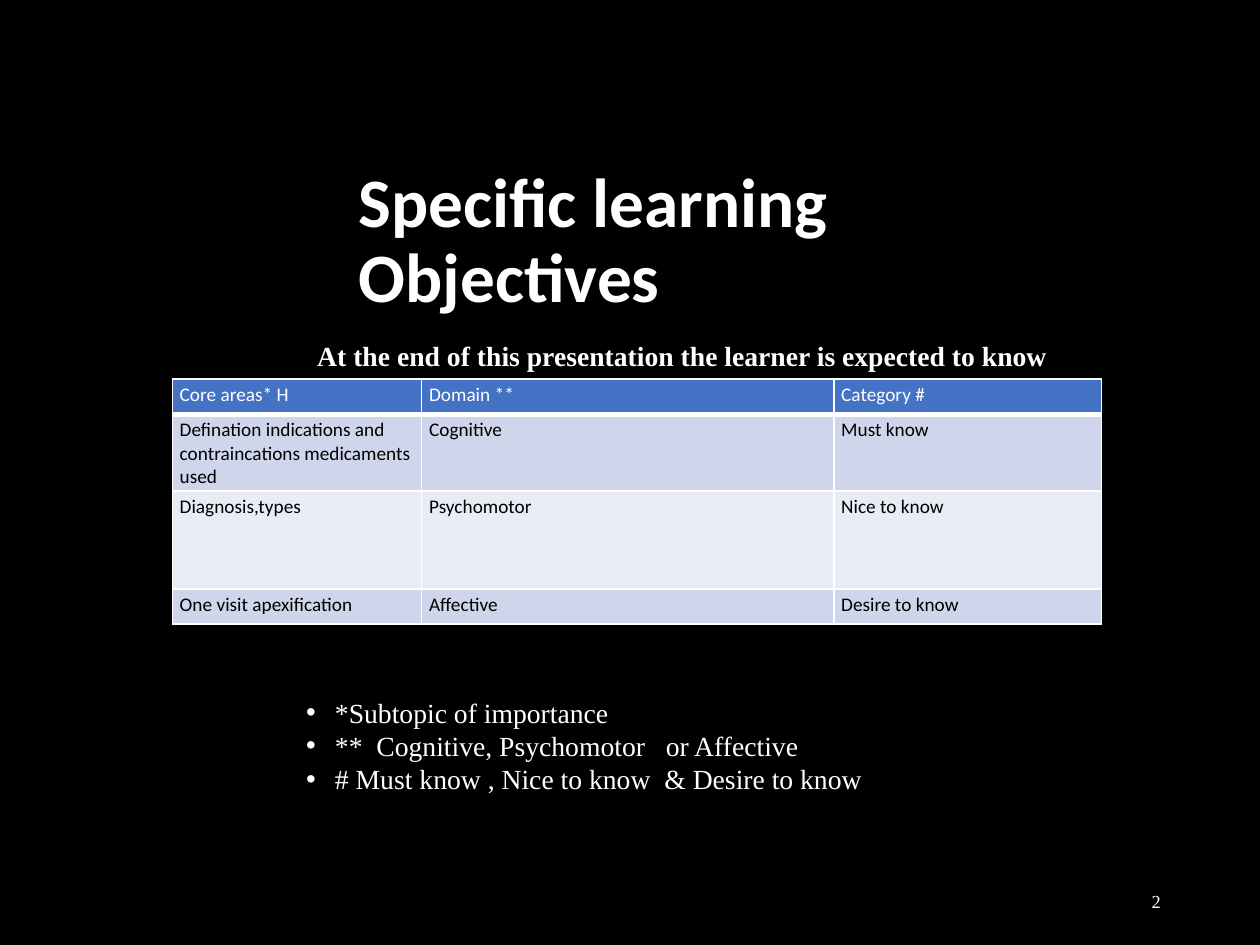
from lxml.etree import SubElement
from pptx import Presentation
from pptx.dml.color import RGBColor
from pptx.enum.text import MSO_ANCHOR as Anchor, PP_ALIGN as Align
from pptx.oxml.ns import qn
from pptx.util import Pt

BLACK = RGBColor(0x00, 0x00, 0x00)
WHITE = RGBColor(0xFF, 0xFF, 0xFF)
HEADER_BLUE = RGBColor(0x44, 0x72, 0xC4)
BAND_DARK = RGBColor(0xCF, 0xD5, 0xEA)
BAND_LIGHT = RGBColor(0xE9, 0xEB, 0xF5)
SANS, SERIF = "Calibri", "Times New Roman"

COLUMN_WIDTHS = [142.5, 235.5, 153]
ROW_HEIGHTS = [20, 43.5, 56, 20]
OBJECTIVES = [
    ["Core areas* H", "Domain **", "Category #"],
    ["Defination indications and contraincations medicaments used", "Cognitive", "Must know"],
    ["Diagnosis,types", "Psychomotor", "Nice to know"],
    ["One visit apexification", "Affective", "Desire to know"],
]
FOOTNOTES = [
    "*Subtopic of importance",
    "**  Cognitive, Psychomotor   or Affective",
    "# Must know , Nice to know  & Desire to know",
]


def write(frame, lines, *, size, font=SERIF, color=WHITE, bold=False,
          align=Align.LEFT, spacing=None, bullet=None, indent=16.5):
    for index, line in enumerate(lines):
        para = frame.paragraphs[0] if index == 0 else frame.add_paragraph()
        para.alignment = align
        if spacing:
            para.line_spacing = spacing
        if bullet:
            props = para._p.get_or_add_pPr()
            props.set("marL", str(Pt(indent)))
            props.set("indent", str(-Pt(indent)))
            SubElement(props, qn("a:buFont"), typeface="Arial")
            SubElement(props, qn("a:buChar"), char=bullet)
        span = para.add_run()
        span.text = line
        span.font.size = Pt(size)
        span.font.name = font
        span.font.bold = bold
        span.font.color.rgb = color


def add_text(page, box, lines, anchor=Anchor.TOP, **style):
    frame = page.shapes.add_textbox(*map(Pt, box)).text_frame
    frame.word_wrap = True
    frame.vertical_anchor = anchor
    write(frame, lines, **style)


def outline_cell(cell, bottom):
    props = cell._tc.get_or_add_tcPr()
    for side, width in (("L", 1), ("R", 1), ("T", 1), ("B", bottom)):
        line = SubElement(props, qn(f"a:ln{side}"), w=str(Pt(width)))
        SubElement(SubElement(line, qn("a:solidFill")), qn("a:srgbClr"), val=str(WHITE))


def add_objectives_table(page, left, top):
    table = page.shapes.add_table(
        len(OBJECTIVES), len(COLUMN_WIDTHS), Pt(left), Pt(top),
        Pt(sum(COLUMN_WIDTHS)), Pt(sum(ROW_HEIGHTS))).table
    for column, width in zip(table.columns, COLUMN_WIDTHS):
        column.width = Pt(width)
    for number, (row, height, texts) in enumerate(zip(table.rows, ROW_HEIGHTS, OBJECTIVES)):
        row.height = Pt(height)
        header = number == 0
        fill = HEADER_BLUE if header else BAND_DARK if number % 2 else BAND_LIGHT
        for cell, text in zip(row.cells, texts):
            cell.margin_left = cell.margin_right = Pt(4.2)
            cell.margin_top = cell.margin_bottom = Pt(2.1)
            outline_cell(cell, bottom=3 if header else 1)
            cell.fill.solid()
            cell.fill.fore_color.rgb = fill
            write(cell.text_frame, [text], size=11, font=SANS,
                  color=WHITE if header else BLACK)


def build_objectives_slide(deck):
    page = deck.slides.add_slide(deck.slide_layouts[6])
    page.background.fill.solid()
    page.background.fill.fore_color.rgb = BLACK
    add_text(page, (198, 114, 410.4, 49), ["Specific learning Objectives"],
             anchor=Anchor.MIDDLE, size=39.6, font=SANS, bold=True, spacing=0.9)
    add_objectives_table(page, 98.5, 216.7)
    add_text(page, (167.8, 394, 367, 65), FOOTNOTES, size=15.8, bullet="•")
    add_text(page, (174.2, 190, 434, 26.6),
             ["At the end of this presentation the learner is expected to know"],
             size=15.8, bold=True)
    add_text(page, (508.3, 500.4, 162, 28.8), ["2"], anchor=Anchor.MIDDLE,
             size=10.5, align=Align.RIGHT)


def main():
    deck = Presentation()
    deck.slide_width, deck.slide_height = Pt(720), Pt(540)
    build_objectives_slide(deck)
    deck.save("out.pptx")


if __name__ == "__main__":
    main()
